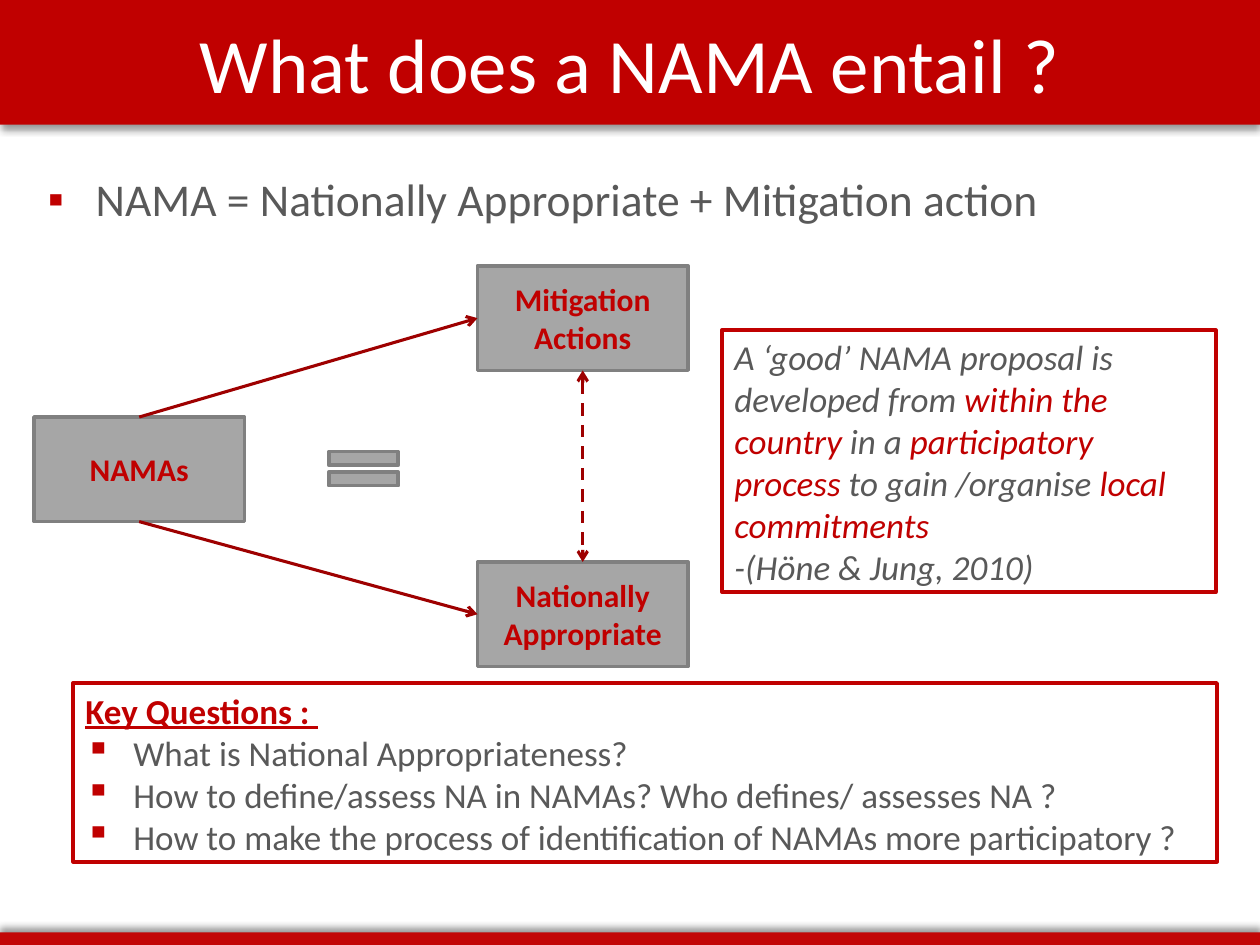
from lxml.etree import SubElement
from pptx import Presentation
from pptx.dml.color import RGBColor
from pptx.enum.dml import MSO_LINE
from pptx.enum.shapes import MSO_CONNECTOR, MSO_SHAPE
from pptx.enum.text import MSO_ANCHOR, PP_ALIGN
from pptx.oxml.ns import qn
from pptx.util import Inches, Pt

COLORS = {
    "red": "C00000",
    "footer": "C20606",
    "arrow": "9E0000",
    "gray": "A6A6A6",
    "border": "808080",
    "text": "595959",
    "white": "FFFFFF",
    "black": "000000",
}
FONT = "Calibri"
BOX_W, BOX_H = 1.67, 0.83
TOP, LEFT, BOTTOM = 0, 1, 2


def rgb(color):
    return RGBColor.from_string(COLORS[color])


def place(shape, left, top, width, height):
    shape.left, shape.top = Inches(left), Inches(top)
    shape.width, shape.height = Inches(width), Inches(height)


def add_run(paragraph, text, size, color, bold=False, italic=False, underline=False):
    run = paragraph.add_run()
    run.text = text
    font = run.font
    font.name, font.size = FONT, Pt(size)
    font.bold, font.italic, font.underline = bold, italic, underline
    font.color.rgb = rgb(color)


def add_bullet(paragraph):
    """Give the paragraph a hanging indent and a red square bullet."""
    properties = paragraph._p.get_or_add_pPr()
    properties.set("marL", str(Inches(0.38)))
    properties.set("indent", str(-Inches(0.38)))
    bullet_color = SubElement(properties, qn("a:buClr"))
    SubElement(bullet_color, qn("a:srgbClr"), val=COLORS["red"])
    SubElement(properties, qn("a:buChar"), char="▪")


def add_shadow(shape, degrees):
    shape.shadow.inherit = False
    effects = shape._element.spPr.find(qn("a:effectLst"))
    shadow = SubElement(effects, qn("a:outerShdw"), blurRad=str(Pt(4)),
                        dist=str(Pt(3)), dir=str(degrees * 60000), rotWithShape="0")
    shadow_color = SubElement(shadow, qn("a:srgbClr"), val=COLORS["black"])
    SubElement(shadow_color, qn("a:alpha"), val="40000")


def add_block(slide, kind, left, top, width, height, fill, border=None):
    block = slide.shapes.add_shape(kind, Inches(left), Inches(top),
                                   Inches(width), Inches(height))
    block.shadow.inherit = False
    block.fill.solid()
    block.fill.fore_color.rgb = rgb(fill)
    if border:
        block.line.color.rgb = rgb(border)
        block.line.width = Pt(2)
    else:
        block.line.fill.background()
    block.text_frame.word_wrap = True
    return block


def add_concept(slide, label, left, top):
    concept = add_block(slide, MSO_SHAPE.RECTANGLE, left, top, BOX_W, BOX_H,
                        "gray", "border")
    concept.text_frame.vertical_anchor = MSO_ANCHOR.MIDDLE
    paragraph = concept.text_frame.paragraphs[0]
    paragraph.alignment = PP_ALIGN.CENTER
    add_run(paragraph, label, 18, "red", bold=True)
    return concept


def add_arrow(slide, start, start_side, end, end_side, two_way=False):
    """Join two concepts; a two-way arrow is dashed."""
    arrow = slide.shapes.add_connector(MSO_CONNECTOR.STRAIGHT, 0, 0, 0, 0)
    arrow.begin_connect(start, start_side)
    arrow.end_connect(end, end_side)
    arrow.line.color.rgb = rgb("arrow")
    arrow.line.width = Pt(1.75)
    line = arrow.line._get_or_add_ln()
    if two_way:
        arrow.line.dash_style = MSO_LINE.DASH
        SubElement(line, qn("a:headEnd"), type="arrow")
    SubElement(line, qn("a:tailEnd"), type="arrow")
    SubElement(arrow._element.spPr, qn("a:effectLst"))


def add_panel(slide, left, top, width, height, anchor):
    panel = add_block(slide, MSO_SHAPE.RECTANGLE, left, top, width, height,
                      "white", "red")
    panel.text_frame.vertical_anchor = anchor
    panel.text_frame.paragraphs[0].alignment = PP_ALIGN.LEFT
    return panel.text_frame


def add_left_paragraph(frame):
    paragraph = frame.add_paragraph()
    paragraph.alignment = PP_ALIGN.LEFT
    return paragraph


def fill_title(title):
    place(title, 0, 0, 10, 0.99)
    title.fill.solid()
    title.fill.fore_color.rgb = rgb("red")
    add_shadow(title, 90)
    title.text_frame.vertical_anchor = MSO_ANCHOR.MIDDLE
    heading = title.text_frame.paragraphs[0]
    heading.alignment = PP_ALIGN.CENTER
    add_run(heading, "What does a NAMA entail ?", 44, "white")


def fill_definition(body):
    place(body, 0.28, 1.31, 9.45, 0.86)
    definition = body.text_frame.paragraphs[0]
    add_bullet(definition)
    add_run(definition, "NAMA = Nationally Appropriate + Mitigation action", 26, "text")


def add_diagram(slide):
    namas = add_concept(slide, "NAMAs", 0.27, 3.31)
    mitigation = add_concept(slide, "Mitigation Actions", 3.79, 2.11)
    appropriate = add_concept(slide, "Nationally Appropriate", 3.79, 4.46)
    add_arrow(slide, namas, TOP, mitigation, LEFT)
    add_arrow(slide, namas, BOTTOM, appropriate, LEFT)
    add_block(slide, MSO_SHAPE.MATH_EQUAL, 2.51, 3.49, 0.75, 0.46, "gray", "border")
    add_arrow(slide, mitigation, BOTTOM, appropriate, TOP, two_way=True)


def add_key_questions(slide):
    frame = add_panel(slide, 0.58, 5.42, 9.08, 1.42, MSO_ANCHOR.TOP)
    heading = frame.paragraphs[0]
    add_run(heading, "Key Questions :", 20, "red", bold=True, underline=True)
    add_run(heading, " ", 20, "red", italic=True, underline=True)
    for question in (
        "What is National Appropriateness?",
        "How to define/assess NA in NAMAs? Who defines/ assesses NA ?",
        "How to make the process of identification of NAMAs more participatory ?",
    ):
        paragraph = add_left_paragraph(frame)
        add_bullet(paragraph)
        add_run(paragraph, question, 20, "text")


def add_quote(slide):
    frame = add_panel(slide, 5.73, 2.62, 3.92, 2.08, MSO_ANCHOR.MIDDLE)
    for text, color in (
        ("A ‘good’ NAMA proposal is developed from ", "text"),
        ("within the country", "red"),
        (" in a ", "text"),
        ("participatory process", "red"),
        (" to gain /organise ", "text"),
        ("local commitments", "red"),
    ):
        add_run(frame.paragraphs[0], text, 20, color, italic=True)
    add_run(add_left_paragraph(frame), "-(Höne & Jung, 2010)", 20, "text", italic=True)


def main():
    presentation = Presentation()
    presentation.slide_width, presentation.slide_height = Inches(10), Inches(7.5)
    slide = presentation.slides.add_slide(presentation.slide_layouts[1])
    footer = add_block(slide, MSO_SHAPE.RECTANGLE, 0, 7.4, 10, 0.1, "footer")
    add_shadow(footer, 270)
    fill_title(slide.shapes.title)
    fill_definition(slide.placeholders[1])
    add_diagram(slide)
    add_key_questions(slide)
    add_quote(slide)
    presentation.save("out.pptx")


if __name__ == "__main__":
    main()
